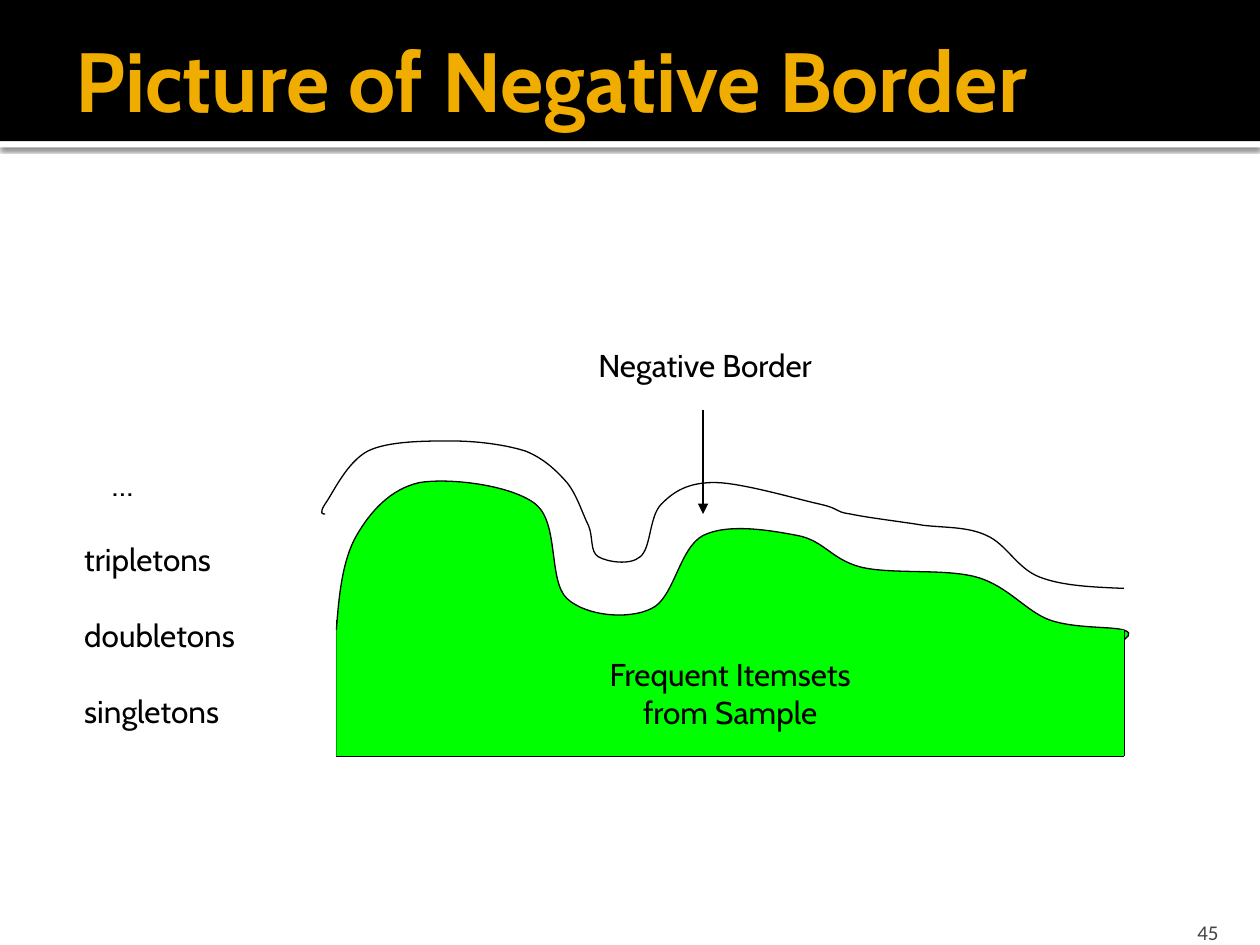
from dataclasses import dataclass

from lxml.etree import SubElement
from pptx import Presentation
from pptx.dml.color import RGBColor
from pptx.enum.shapes import MSO_CONNECTOR, MSO_SHAPE
from pptx.enum.text import MSO_ANCHOR, MSO_AUTO_SIZE, PP_ALIGN
from pptx.oxml import parse_xml
from pptx.oxml.ns import nsdecls, qn
from pptx.util import Pt

PX = 9144  # EMU per px, 100 px to the inch


@dataclass(frozen=True)
class Theme:
    black: str = "000000"
    white: str = "FFFFFF"
    gold: str = "F0AD00"
    gray: str = "454545"
    green: str = "00FF00"
    font: str = "Cabin"
    plain: str = "Calibri"
    head: int = 48
    body: int = 18
    small: int = 12
    line: float = 0.75


class Deck:
    def __init__(self, theme, wide, high):
        self.theme = theme
        self.prs = Presentation()
        self.prs.slide_width, self.prs.slide_height = wide * PX, high * PX
        self.slide = self.prs.slides.add_slide(self.prs.slide_layouts[5])
        self.shapes = self.slide.shapes

    def letter(self, shape, text, size, color, font=None, bold=False,
               align=PP_ALIGN.LEFT, anchor=MSO_ANCHOR.TOP, inset=(10, 5, 10, 5), gap=0):
        frame = shape.text_frame
        frame.text = text
        frame.word_wrap = True
        frame.auto_size = MSO_AUTO_SIZE.NONE
        frame.vertical_anchor = anchor
        (frame.margin_left, frame.margin_top,
         frame.margin_right, frame.margin_bottom) = [n * PX for n in inset]
        for i, para in enumerate(frame.paragraphs):
            para.alignment = align
            para.space_before = Pt(gap if i else 0)
            for run in para.runs:
                run.font.name = font or self.theme.font
                run.font.size = Pt(size)
                run.font.bold = bold
                run.font.color.rgb = RGBColor.from_string(color)
        return frame

    def title(self, text, box, **style):
        shape = self.shapes.title
        shape.left, shape.top, shape.width, shape.height = [n * PX for n in box]
        self.shapes._spTree.append(shape._element)  # in front of the band
        self.letter(shape, text, self.theme.head, self.theme.gold, bold=True, **style)

    def label(self, text, box, size=None, color=None, **style):
        shape = self.shapes.add_textbox(*[n * PX for n in box])
        return self.letter(shape, text, size or self.theme.body,
                           color or self.theme.black, **style)

    def block(self, box, color):
        shape = self.shapes.add_shape(MSO_SHAPE.RECTANGLE, *[n * PX for n in box])
        shape.shadow.inherit = False
        shape.fill.solid()
        shape.fill.fore_color.rgb = RGBColor.from_string(color)
        shape.line.fill.background()
        return shape

    def shade(self, shape):
        glow = shape._element.spPr.find(qn("a:effectLst"))
        glow.append(parse_xml(
            f'<a:outerShdw {nsdecls("a")} blurRad="{Pt(2.5)}" dist="{Pt(0.8)}" '
            'dir="5400000" algn="tl" rotWithShape="0">'
            f'<a:srgbClr val="{self.theme.black}"><a:alpha val="60000"/></a:srgbClr>'
            '</a:outerShdw>'))

    def stroke(self, shape):
        shape.line.color.rgb = RGBColor.from_string(self.theme.black)
        shape.line.width = Pt(self.theme.line)

    def curve(self, points, color=None):
        """Draw a start point followed by three points per Bezier piece."""
        pen = self.shapes.build_freeform(*points[0], scale=PX)
        pen.add_line_segments(points[1:], close=False)
        shape = pen.convert_to_shape()
        shape.shadow.inherit = False
        # Join each three straight steps into one Bezier piece
        steps = list(shape._element.iter(qn("a:lnTo")))
        for i in range(0, len(steps), 3):
            bend = SubElement(steps[i].getparent(), qn("a:cubicBezTo"))
            for step in steps[i:i + 3]:
                bend.append(step[0])
                step.getparent().remove(step)
        if color:
            shape.fill.solid()
            shape.fill.fore_color.rgb = RGBColor.from_string(color)
        else:
            shape.fill.background()
        self.stroke(shape)

    def line(self, start, end, arrow=False):
        shape = self.shapes.add_connector(
            MSO_CONNECTOR.STRAIGHT, *[n * PX for n in start + end])
        self.stroke(shape)
        if arrow:
            SubElement(shape.line._get_or_add_ln(), qn("a:tailEnd"), type="triangle")
        SubElement(shape._element.spPr, qn("a:effectLst"))


def main():
    theme = Theme()
    deck = Deck(theme, 1000, 750)

    # Header band and title
    deck.shade(deck.block((0, 112, 1000, 5), theme.white))
    deck.block((0, 0, 1000, 112), theme.black)
    deck.title("Picture of Negative Border", (50, 17, 950, 92),
               anchor=MSO_ANCHOR.MIDDLE, inset=(10, 5, 5, 5))

    # Page number
    deck.label("45", (897, 720, 80, 30), theme.small, theme.gray, font=theme.plain,
               align=PP_ALIGN.RIGHT, anchor=MSO_ANCHOR.BOTTOM, inset=(10, 5, 10, 0))

    # Itemset sizes, with the dots set in
    sizes = deck.label("…\ntripletons\ndoubletons\nsingletons", (57, 364, 181, 290), gap=21.6)
    sizes.paragraphs[0]._p.get_or_add_pPr().set("marL", str(22 * PX))

    # Frequent region and the border above it
    deck.curve([
        (267, 500), (269, 472), (272, 444), (283, 425),
        (294, 406), (310, 388), (333, 383), (357, 379), (406, 385), (425, 400),
        (444, 415), (435, 461), (450, 475), (465, 489), (499, 492), (517, 483),
        (535, 475), (539, 435), (558, 425), (578, 415), (612, 421), (633, 425),
        (654, 429), (660, 444), (683, 450), (707, 456), (750, 451), (775, 458),
        (800, 465), (814, 485), (833, 492), (853, 499), (882, 497), (892, 500),
        (901, 503), (892, 507), (892, 508)], theme.green)
    deck.curve([
        (258, 408), (256, 408), (253, 408), (258, 400),
        (264, 392), (275, 367), (292, 358), (308, 350), (338, 350), (358, 350),
        (379, 350), (401, 353), (417, 358), (432, 364), (442, 374), (450, 383),
        (458, 393), (462, 407), (467, 417), (471, 426), (468, 438), (475, 442),
        (482, 446), (500, 449), (508, 442), (517, 435), (515, 410), (525, 400),
        (535, 390), (546, 383), (567, 383), (588, 383), (632, 396), (650, 400),
        (668, 404), (661, 406), (675, 408), (689, 411), (715, 414), (733, 417),
        (751, 419), (768, 418), (783, 425), (799, 432), (807, 451), (825, 458),
        (843, 465), (867, 466), (892, 467)])

    # Border label and arrow
    deck.label("Negative Border", (465, 270, 257, 50))
    deck.line((558, 325), (558, 408), arrow=True)

    # Base of the region
    left, right, base = 267, 892, 600
    deck.line((left, base), (right, base))
    deck.line((left, base), (left, 492))
    deck.line((right, 500), (right, base))
    body = deck.block((left, 500, right - left, 100), theme.green)
    deck.letter(body, "Frequent Itemsets\nfrom Sample", theme.body, theme.black,
                align=PP_ALIGN.CENTER, anchor=MSO_ANCHOR.MIDDLE)

    deck.prs.save("out.pptx")


if __name__ == "__main__":
    main()
